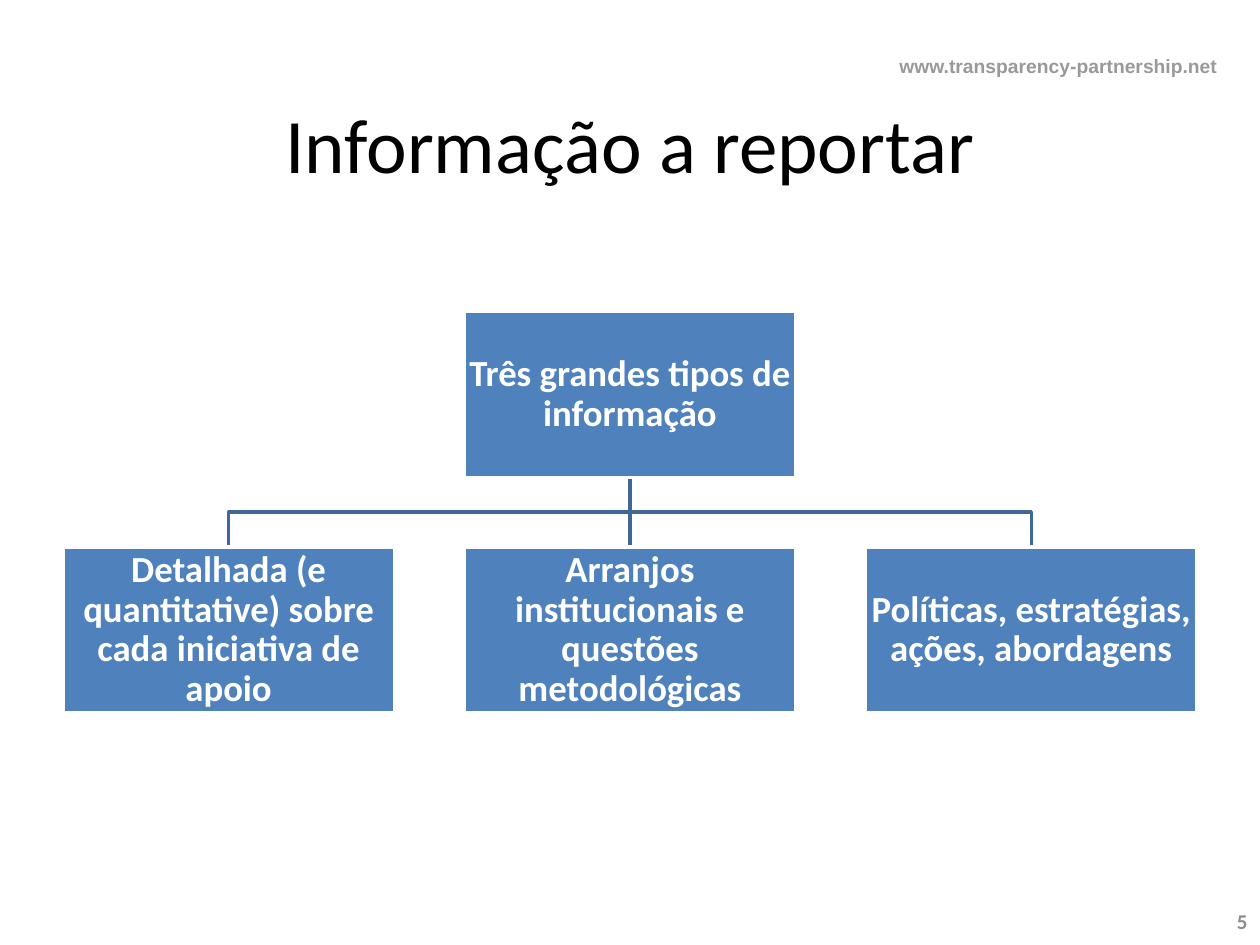
from dataclasses import dataclass

from lxml import etree
from pptx import Presentation
from pptx.dml.color import RGBColor
from pptx.enum import shapes, text
from pptx.oxml.ns import qn
from pptx.util import Inches, Pt


@dataclass(frozen=True)
class Theme:
    fill: RGBColor = RGBColor(0x4F, 0x81, 0xBD)
    line: RGBColor = RGBColor(0x3F, 0x67, 0x97)
    white: RGBColor = RGBColor(0xFF, 0xFF, 0xFF)
    black: RGBColor = RGBColor(0, 0, 0)
    address: RGBColor = RGBColor(0x99, 0x99, 0x99)
    number: RGBColor = RGBColor(0x8C, 0x8C, 0x8C)
    font: str = "Calibri"
    address_font: str = "Arial"
    title_size: int = 44
    box_size: int = 21
    number_size: int = 12
    address_size: int = 11
    line_width: int = 2


@dataclass(frozen=True)
class Node:
    label: str
    left: float
    top: float

    @property
    def center(self) -> float:
        return self.left + BOX_WIDTH / 2


THEME = Theme()
PAGE_WIDTH, PAGE_HEIGHT = 10, 7.5
BOX_WIDTH, BOX_HEIGHT = 2.63, 1.32
ROOT_TOP, CHILD_TOP = 2.47, 4.34
MARGIN = 0.5
STEP = (PAGE_WIDTH - 2 * MARGIN - BOX_WIDTH) / 2
CHILD_LABELS = (
    "Detalhada (e quantitative) sobre cada iniciativa de apoio",
    "Arranjos institucionais e questões metodológicas",
    "Políticas, estratégias, ações, abordagens",
)


def write(frame, content: str, *, size: int, color: RGBColor, font: str = THEME.font,
          bold: bool = False, align=text.PP_ALIGN.LEFT, anchor=text.MSO_ANCHOR.TOP,
          spacing: float = 1.0, wrap: bool = True) -> None:
    frame.word_wrap = wrap
    frame.vertical_anchor = anchor
    para = frame.paragraphs[0]
    para.alignment = align
    para.line_spacing = spacing
    span = para.add_run()
    span.text = content
    span.font.name = font
    span.font.size = Pt(size)
    span.font.bold = bold
    span.font.color.rgb = color


def add_text(page, left: float, top: float, width: float, height: float,
             content: str, **style) -> None:
    box = page.shapes.add_textbox(Inches(left), Inches(top), Inches(width), Inches(height))
    write(box.text_frame, content, **style)


def add_node(page, node: Node):
    box = page.shapes.add_shape(shapes.MSO_SHAPE.RECTANGLE, Inches(node.left),
                                Inches(node.top), Inches(BOX_WIDTH), Inches(BOX_HEIGHT))
    box.shadow.inherit = False
    box.fill.solid()
    box.fill.fore_color.rgb = THEME.fill
    style_line(box.line, THEME.white)
    frame = box.text_frame
    frame.margin_left = frame.margin_right = Inches(0.01)
    frame.margin_top = frame.margin_bottom = Inches(0.01)
    write(frame, node.label, size=THEME.box_size, color=THEME.white, bold=True,
          align=text.PP_ALIGN.CENTER, anchor=text.MSO_ANCHOR.MIDDLE, spacing=0.9)
    return box


def style_line(line, color: RGBColor) -> None:
    line.color.rgb = color
    line.width = Pt(THEME.line_width)


def add_elbow(page, parent: Node, child: Node) -> None:
    """Draw a down-across-down branch from parent to child."""
    start = parent.top + BOX_HEIGHT
    middle = (start + child.top) / 2
    points = [(parent.center, middle), (child.center, middle), (child.center, child.top)]
    builder = page.shapes.build_freeform(Inches(parent.center), Inches(start))
    builder.add_line_segments([(Inches(x), Inches(y)) for x, y in points], close=False)
    branch = builder.convert_to_shape()
    branch.shadow.inherit = False
    branch.fill.background()
    style_line(branch.line, THEME.line)


def add_trunk(page, parent: Node, child: Node):
    trunk = page.shapes.add_connector(
        shapes.MSO_CONNECTOR.STRAIGHT, Inches(parent.center),
        Inches(parent.top + BOX_HEIGHT), Inches(child.center), Inches(child.top))
    style_line(trunk.line, THEME.line)
    etree.SubElement(trunk.element.spPr, qn("a:effectLst"))
    return trunk


def add_tree(page) -> None:
    """Lines go first so that the white box outlines cover their ends."""
    root = Node("Três grandes tipos de informação", MARGIN + STEP, ROOT_TOP)
    children = [Node(label, MARGIN + index * STEP, CHILD_TOP)
                for index, label in enumerate(CHILD_LABELS)]
    first, middle, last = children
    add_elbow(page, root, last)
    trunk = add_trunk(page, root, middle)
    add_elbow(page, root, first)
    root_box = add_node(page, root)
    child_boxes = [add_node(page, child) for child in children]
    trunk.begin_connect(root_box, 2)
    trunk.end_connect(child_boxes[1], 0)


def main() -> None:
    deck = Presentation()
    deck.slide_width, deck.slide_height = Inches(PAGE_WIDTH), Inches(PAGE_HEIGHT)
    page = deck.slides.add_slide(deck.slide_layouts[6])
    add_text(page, 7.04, 0.38, 3.06, 0.29, "www.transparency-partnership.net",
             size=THEME.address_size, color=THEME.address, font=THEME.address_font,
             bold=True, wrap=False)
    add_text(page, 7.67, 7.11, 2.33, 0.4, "5", size=THEME.number_size,
             color=THEME.number, bold=True, align=text.PP_ALIGN.RIGHT,
             anchor=text.MSO_ANCHOR.MIDDLE)
    add_tree(page)
    add_text(page, 0.69, 0.72, 8.62, 1.13, "Informação a reportar",
             size=THEME.title_size, color=THEME.black, align=text.PP_ALIGN.CENTER)
    deck.save("out.pptx")


if __name__ == "__main__":
    main()
